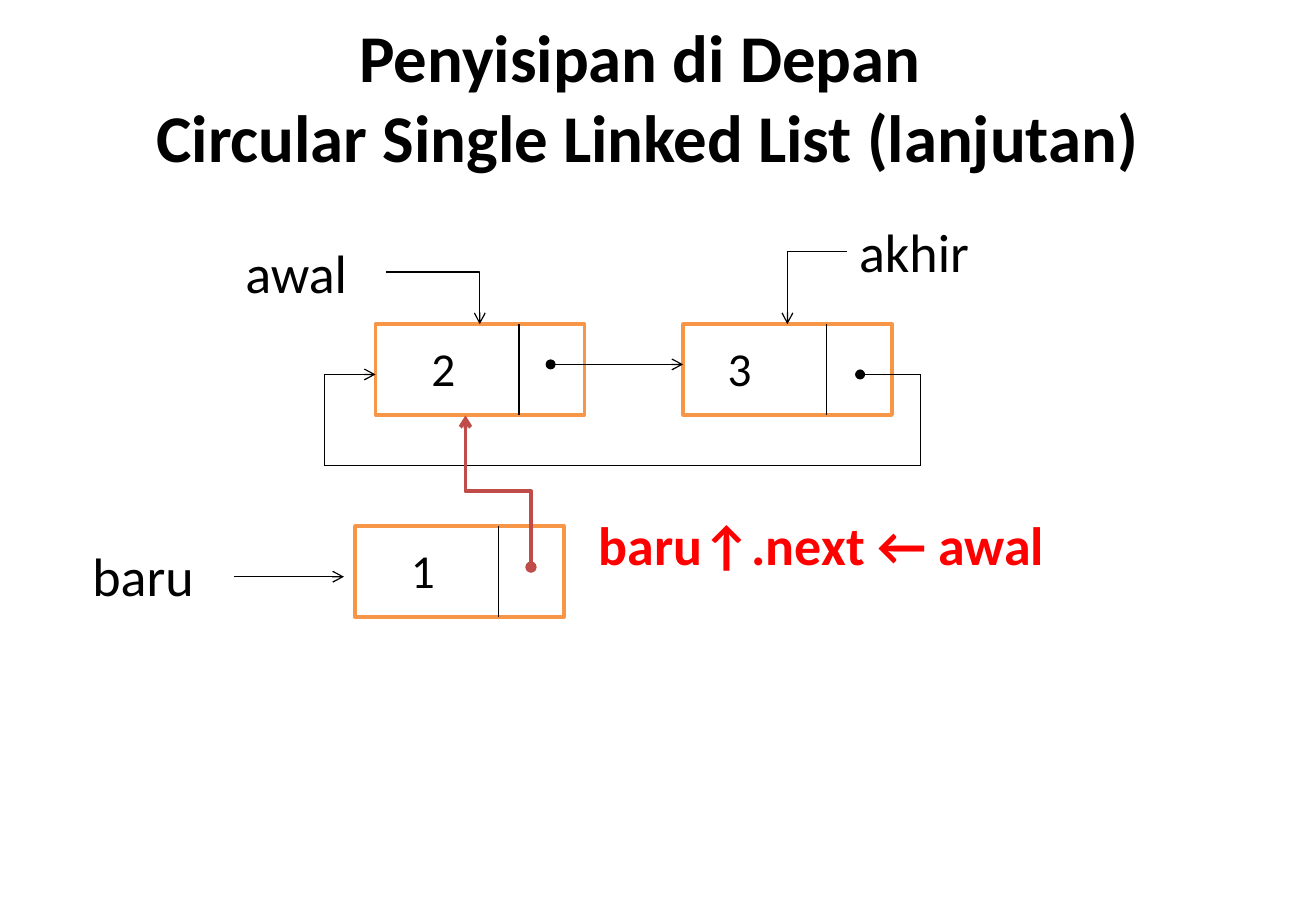
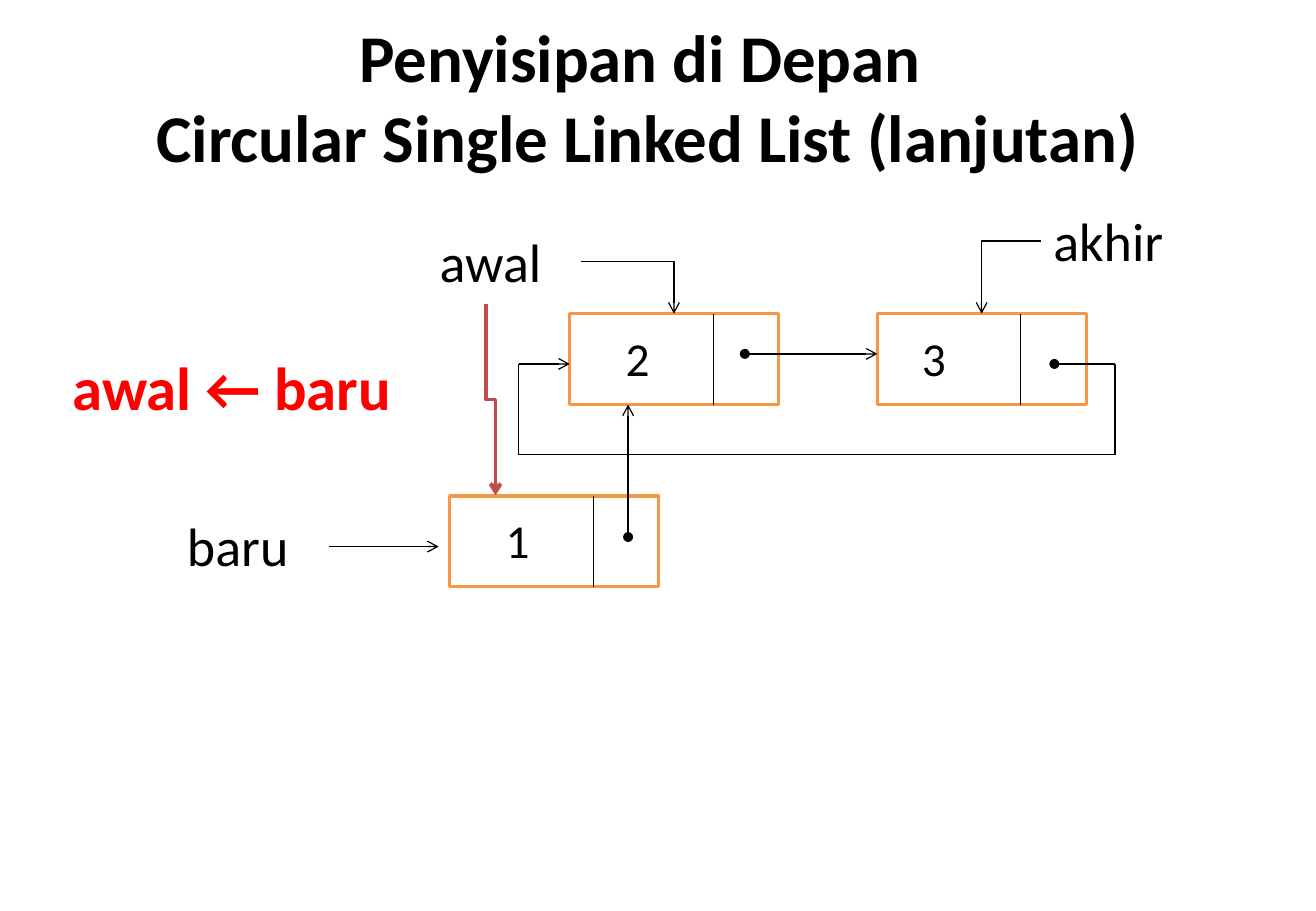
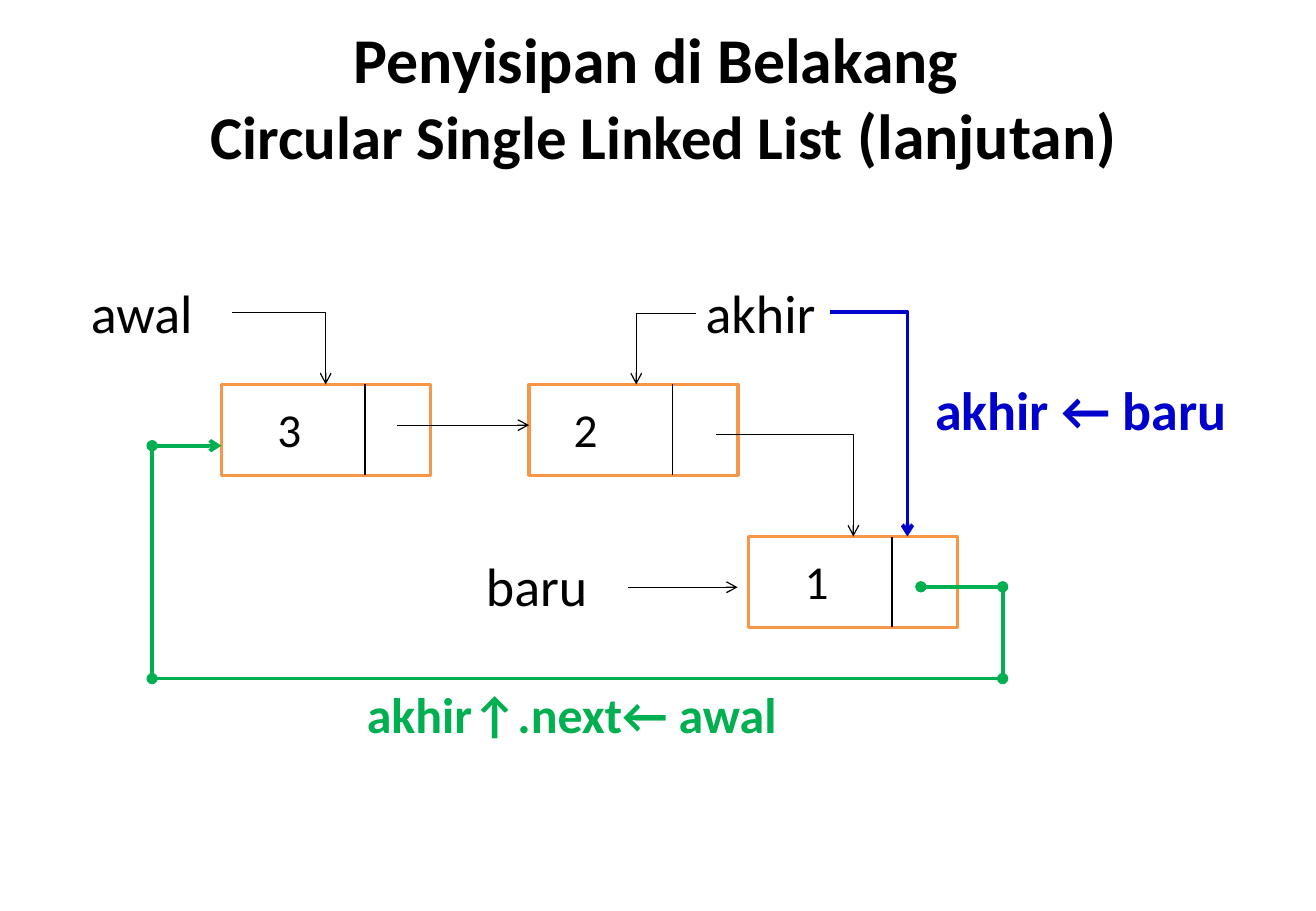
import pptx
import pptx.util
import pptx.dml.color
import pptx.enum.shapes
import pptx.enum.text
import pptx.oxml
import pptx.oxml.ns
from itertools import pairwise

Cm = pptx.util.Cm
Pt = pptx.util.Pt
RGBColor = pptx.dml.color.RGBColor
LINK = pptx.enum.shapes.MSO_CONNECTOR

# Shared colours and formats
BLACK = RGBColor(0x00, 0x00, 0x00)
WHITE = RGBColor(0xFF, 0xFF, 0xFF)
ORANGE = RGBColor(0xF7, 0x96, 0x46)
BRICK = RGBColor(0xBF, 0x4C, 0x48)
RED = RGBColor(0xFF, 0x00, 0x00)
BLUE = RGBColor(0x00, 0x00, 0xCC)
GREEN = RGBColor(0x00, 0xB0, 0x50)
FONT = {"name": "Calibri", "bold": False}
BOLD = {"name": "Calibri", "bold": True}
THIN, THICK = 0.75, 2.25

# Node and ring sizes in cm
NODE_W, NODE_H, SPLIT = 4.37, 1.9, 3
STEP = 6.43

FRONT = [[("Penyisipan di Depan ", 39.6)],
         [("Circular Single Linked List (lanjutan)", 39.6)]]
BACK = [[("Penyisipan di Belakang ", 37.8)],
        [("Circular Single Linked List ", 36), ("(lanjutan)", 37.8)]]


# Text
def style(font, size, color, base):
    for key, value in {**base, "size": Pt(size)}.items():
        setattr(font, key, value)
    font.color.rgb = color


def text(slide, x, y, words, size=32, color=BLACK, base=FONT, w=3.2, h=1.63):
    box = slide.shapes.add_textbox(Cm(x), Cm(y), Cm(w), Cm(h))
    box.text_frame.word_wrap = True
    run = box.text_frame.paragraphs[0].add_run()
    run.text = words
    style(run.font, size, color, base)


def rule(slide, x, y, words, size, color, w):
    text(slide, x, y, words, size, color, BOLD, w, 1.9)


def start(deck, lines, x=1.27):
    """Add a slide with its two-line title."""
    slide = deck.slides.add_slide(deck.slide_layouts[5])
    title = slide.shapes.title
    place = {"left": x, "top": 0.64, "width": 24.54, "height": 2.74}
    for key, value in place.items():
        setattr(title, key, Cm(value))
    frame = title.text_frame
    form = {"auto_size": pptx.enum.text.MSO_AUTO_SIZE.NONE,
            "vertical_anchor": pptx.enum.text.MSO_ANCHOR.MIDDLE,
            "word_wrap": True}
    for key, value in form.items():
        setattr(frame, key, value)
    para = frame.paragraphs[0]
    para.alignment = pptx.enum.text.PP_ALIGN.CENTER
    for row, runs in enumerate(lines):
        if row:
            para.add_line_break()
        for words, size in runs:
            run = para.add_run()
            run.text = words
            style(run.font, size, BLACK, BOLD)
    return slide


# Lines and arrows
def finish(link, color, width, head, tail):
    link.line.color.rgb = color
    link.line.width = Pt(width)
    ends = link.line._get_or_add_ln()
    for tag, kind in (("a:headEnd", head), ("a:tailEnd", tail)):
        if kind:
            end = pptx.oxml.parse_xml(
                f'<{tag} {pptx.oxml.ns.nsdecls("a")} type="{kind}"/>')
            ends.append(end)
    link._element.spPr.append(pptx.oxml.parse_xml(
        f'<a:effectLst {pptx.oxml.ns.nsdecls("a")}/>'))


def line(slide, a, b, color=BLACK, width=THIN, head=None, tail=None):
    link = slide.shapes.add_connector(
        LINK.STRAIGHT, Cm(a[0]), Cm(a[1]), Cm(b[0]), Cm(b[1]))
    finish(link, color, width, head, tail)


def elbow(slide, mid, w, h, shape, frame, color, width, head):
    """Place a bent arrow by its centre, size and turning attributes."""
    x, y = mid[0] - w / 2, mid[1] - h / 2
    link = slide.shapes.add_connector(
        LINK.ELBOW, Cm(x), Cm(y), Cm(x + w), Cm(y + h))
    props = link._element.spPr
    props.find(pptx.oxml.ns.qn("a:prstGeom")).set("prst", shape)
    for key, value in frame.items():
        props.find(pptx.oxml.ns.qn("a:xfrm")).set(key, value)
    finish(link, color, width, head, "arrow")


def middle(a, b):
    return (a[0] + b[0]) / 2, (a[1] + b[1]) / 2


def turn(slide, a, b, color=BLACK, width=THIN):
    """Arrow that runs sideways, then down."""
    frame = {"rot": "10800000", "flipV": "1"} if b[0] < a[0] else {}
    elbow(slide, middle(a, b), abs(b[0] - a[0]), abs(b[1] - a[1]),
          "bentConnector2", frame, color, width, None)


def jog(slide, a, b, head=None):
    """Thick upright arrow with a sideways step halfway."""
    frame = {"rot": "16200000"}
    if b[0] < a[0]:
        frame["flipV"] = "1"
    if b[1] > a[1]:
        frame["flipH"] = "1"
    elbow(slide, middle(a, b), abs(b[1] - a[1]), abs(b[0] - a[0]),
          "bentConnector3", frame, BRICK, THICK, head)


def chain(slide, points, color=BLACK, width=THIN, dots=False):
    """Joined lines: a dot at the start (or every joint), an arrow at the end."""
    last = len(points) - 2
    for i, (a, b) in enumerate(pairwise(points)):
        line(slide, a, b, color, width,
             "oval" if dots or i == 0 else None,
             "arrow" if i == last else None)


# List parts
def node(slide, x, y, value, inset=0.92):
    box = slide.shapes.add_shape(
        pptx.enum.shapes.MSO_SHAPE.RECTANGLE,
        Cm(x), Cm(y), Cm(NODE_W), Cm(NODE_H))
    box.shadow.inherit = False
    box.fill.solid()
    box.fill.fore_color.rgb = WHITE
    box.line.color.rgb = ORANGE
    box.line.width = Pt(2)
    line(slide, (x + SPLIT, y), (x + SPLIT, y + NODE_H))
    text(slide, x + inset, y + 0.2, value, 28, w=1.6, h=1.45)


def fresh(slide, x, y):
    """The new node with its pointer."""
    node(slide, x, y, "1")
    text(slide, x - 5.74, y + 0.22, "baru")
    line(slide, (x - 2.52, y + 1.06), (x - 0.23, y + 1.06), tail="arrow")


def pair(slide, x, y, first, second):
    node(slide, x, y, first)
    node(slide, x + STEP, y, second, 0.68)


def ring(slide, x, y):
    """Two nodes in a circle with their first and last pointers."""
    pair(slide, x, y, "2", "3")
    text(slide, x - 2.97, y - 1.9, "awal")
    text(slide, x + 9.86, y - 2.34, "akhir")
    turn(slide, (x + 0.23, y - 1.09), (x + 2.18, y))
    turn(slide, (x + 9.86, y - 1.52), (x + 8.61, y))
    chain(slide, [(x + 3.66, y + 0.84), (x + STEP, y + 0.84)])
    right, left, high, low = x + 11.4, x - 1.07, y + 1.05, y + 2.95
    chain(slide, [(x + 10.13, high), (right, high), (right, low),
                  (left, low), (left, high), (x, high)])


# Slides
def link_new(deck):
    slide = start(deck, FRONT)
    ring(slide, 7.85, 6.78)
    fresh(slide, 7.42, 11)
    jog(slide, (11.1, 11.86), (9.73, 8.69), "oval")
    rule(slide, 12.27, 10.58, "baru↑.next ← awal", 32, RED, 11.22)


def move_first(deck):
    slide = start(deck, FRONT)
    ring(slide, 11.91, 6.56)
    fresh(slide, 9.4, 10.37)
    chain(slide, [(13.13, 11.23), (13.13, 8.46)])
    jog(slide, (10.16, 6.35), (10.36, 10.36))
    rule(slide, 1.27, 7.2, "awal ← baru", 36, RED, 8.05)


def move_last(deck):
    slide = start(deck, BACK, 1.6)
    x, y = 4.63, 8.04
    pair(slide, x, y, "3", "2")
    fresh(slide, 15.65, 11.22)
    text(slide, 1.65, 5.72, "awal")
    text(slide, 14.5, 5.72, "akhir")
    turn(slide, (4.85, 6.53), (6.81, y))
    turn(slide, (14.55, 6.55), (13.3, y))
    line(slide, (8.3, 8.89), (x + STEP, 8.89), tail="arrow")
    turn(slide, (14.96, 9.09), (17.84, 11.22))
    turn(slide, (17.35, 6.53), (18.97, 11.22), BLUE, THICK)
    rule(slide, 19.3, 7.75, "akhir ← baru", 32, BLUE, 8.13)
    chain(slide, [(19.25, 12.27), (20.96, 12.27), (20.96, 14.19),
                  (3.18, 14.19), (3.18, 9.32), (x, 9.32)],
          GREEN, THICK, True)
    rule(slide, 7.42, 14.17, "akhir↑.next← awal", 29.6, GREEN, 9.32)


def main():
    deck = pptx.Presentation()
    deck.slide_width, deck.slide_height = Cm(27.51), Cm(19.05)
    for build in (link_new, move_first, move_last):
        build(deck)
    deck.save("out.pptx")


if __name__ == "__main__":
    main()
